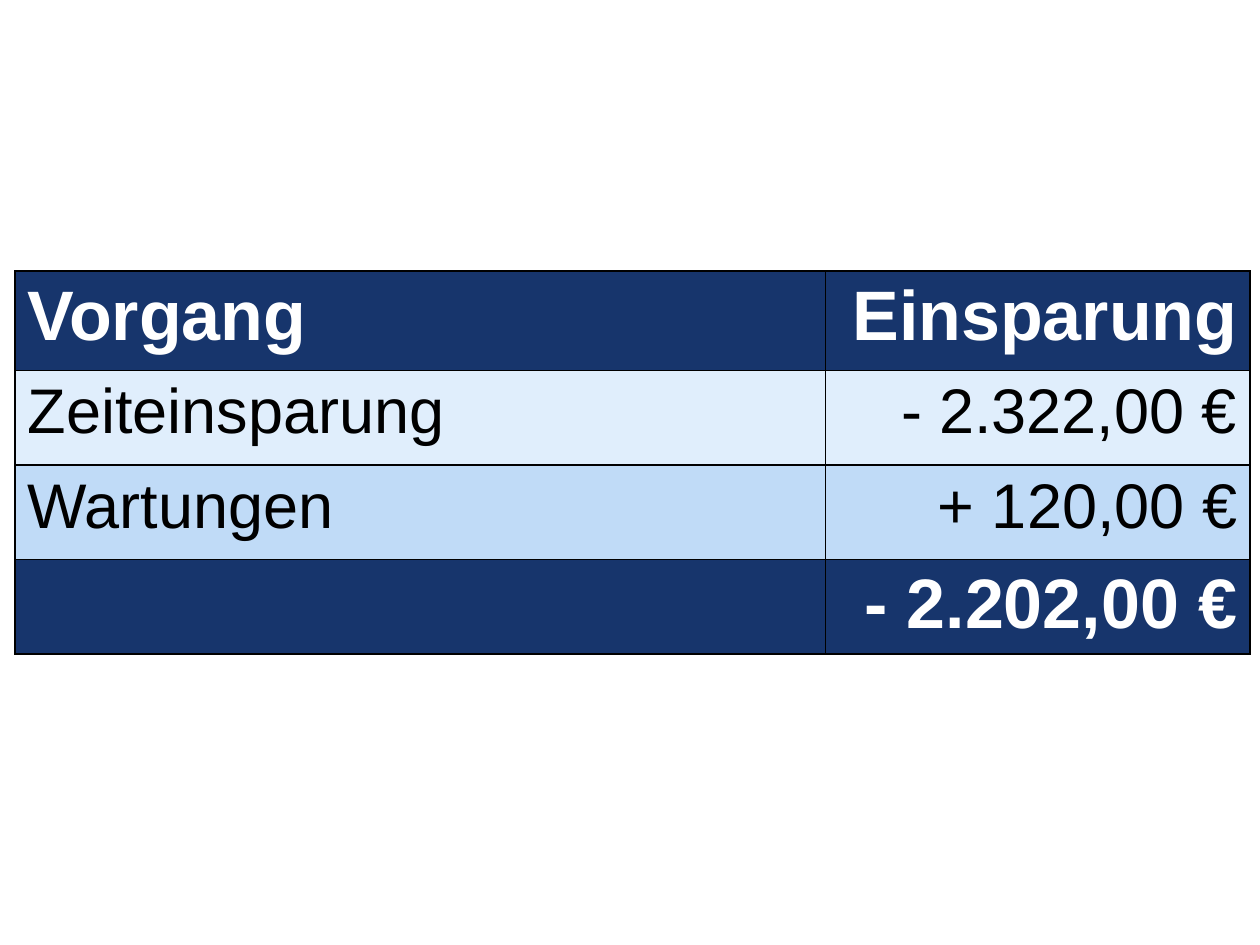
from dataclasses import dataclass

from lxml import etree
from pptx import Presentation
from pptx.dml.color import RGBColor
from pptx.enum.text import PP_ALIGN
from pptx.oxml.ns import qn
from pptx.table import _Cell
from pptx.util import Inches, Pt

LEFT, RIGHT = PP_ALIGN.LEFT, PP_ALIGN.RIGHT
NAVY, PALE_BLUE, LIGHT_BLUE = "17356C", "E0EEFC", "C0DBF7"
WHITE, BLACK = "FFFFFF", "000000"
FONT = "Arial"
COLUMN_WIDTHS = (6.43, 3.37)


@dataclass(frozen=True)
class SavingsRow:
    label: str
    amount: str
    fill: str
    height: float = 0.75
    emphasized: bool = False


ROWS = (
    SavingsRow("Vorgang", "Einsparung", NAVY, height=0.79, emphasized=True),
    SavingsRow("Zeiteinsparung", "- 2.322,00 €", PALE_BLUE),
    SavingsRow("Wartungen", "+ 120,00 €", LIGHT_BLUE),
    SavingsRow("", "- 2.202,00 €", NAVY, emphasized=True),
)


def rgb(color: str) -> RGBColor:
    return RGBColor.from_string(color)


def write_text(cell: _Cell, text: str, *, size: int, color: str, bold: bool,
               align: PP_ALIGN) -> None:
    paragraph = cell.text_frame.paragraphs[0]
    paragraph.alignment = align
    if not text:
        return
    run = paragraph.add_run()
    run.text = text
    run.font.name = FONT
    run.font.size = Pt(size)
    run.font.bold = bold
    run.font.color.rgb = rgb(color)


def add_borders(cell: _Cell, color: str = BLACK, width: float = 1) -> None:
    """Outline all four sides; border elements must precede the cell fill."""
    properties = cell._tc.get_or_add_tcPr()
    for position, side in enumerate(("lnL", "lnR", "lnT", "lnB")):
        line = etree.Element(qn(f"a:{side}"), w=str(Pt(width)))
        fill = etree.SubElement(line, qn("a:solidFill"))
        etree.SubElement(fill, qn("a:srgbClr"), val=color)
        properties.insert(position, line)


def format_cell(cell: _Cell, text: str, row: SavingsRow, align: PP_ALIGN) -> None:
    cell.fill.solid()
    cell.fill.fore_color.rgb = rgb(row.fill)
    add_borders(cell)
    write_text(cell, text, size=40 if row.emphasized else 36,
               color=WHITE if row.emphasized else BLACK,
               bold=row.emphasized, align=align)


def main() -> None:
    presentation = Presentation()
    presentation.slide_width, presentation.slide_height = Inches(10), Inches(7.5)
    slide = presentation.slides.add_slide(presentation.slide_layouts[6])
    table = slide.shapes.add_table(
        len(ROWS), len(COLUMN_WIDTHS), Inches(0.12), Inches(2.15),
        Inches(sum(COLUMN_WIDTHS)), Inches(sum(row.height for row in ROWS)),
    ).table
    for column, width in zip(table.columns, COLUMN_WIDTHS):
        column.width = Inches(width)
    for index, row in enumerate(ROWS):
        table.rows[index].height = Inches(row.height)
        format_cell(table.cell(index, 0), row.label, row, LEFT)
        format_cell(table.cell(index, 1), row.amount, row, RIGHT)
    presentation.save("out.pptx")


if __name__ == "__main__":
    main()
